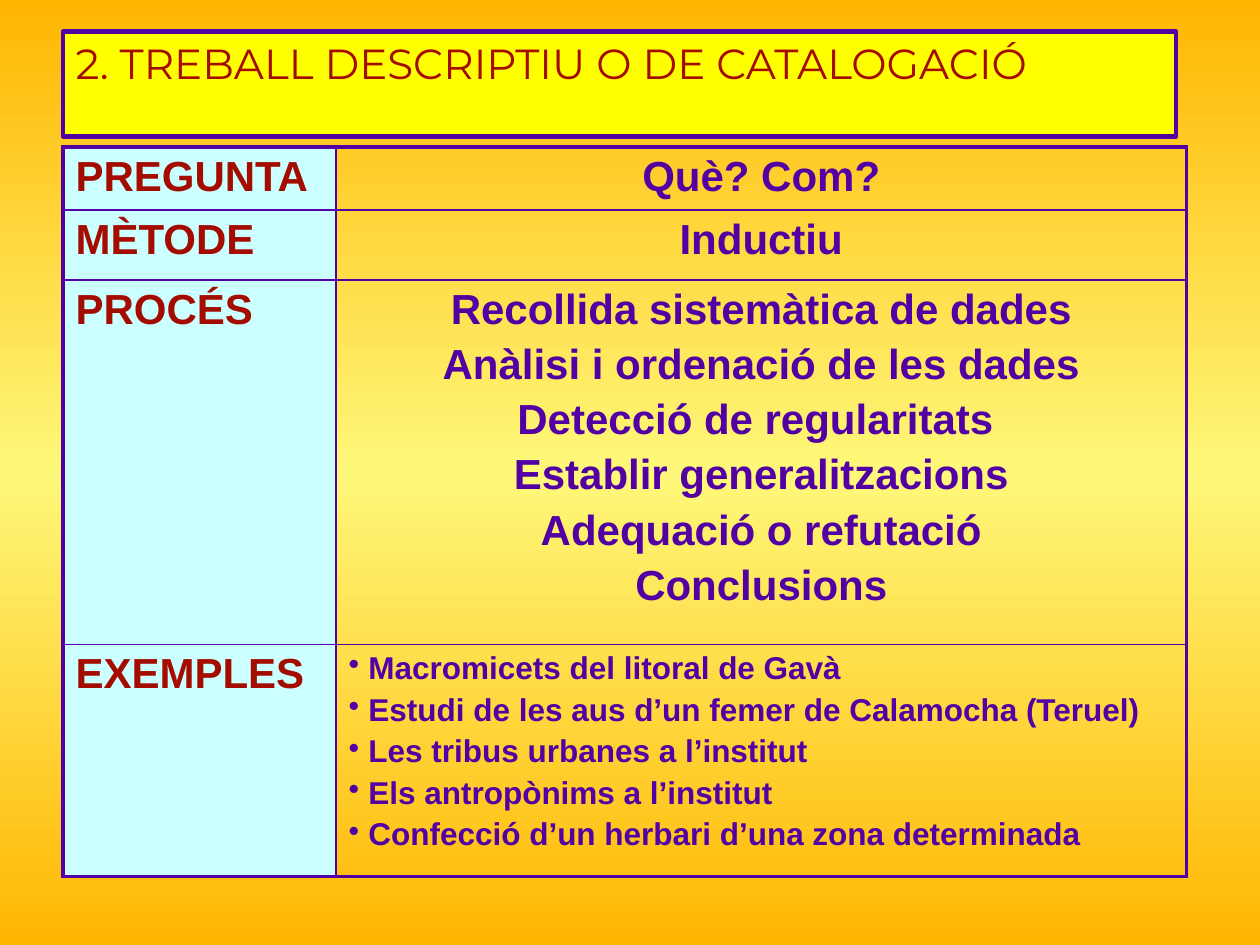
import copy

import pptx
import pptx.dml.color
import pptx.enum.text
import pptx.oxml.ns
import pptx.util
from lxml import etree

ALIGN = pptx.enum.text.PP_ALIGN
COLORS = {
    "edge": "FFB601",
    "glow": "FEF87A",
    "banner": "FFFF00",
    "label": "CCFFFF",
    "violet": "5200A4",
    "red": "A40C00",
}
FONTS = {
    "title": {"name": "Montserrat", "size": pptx.util.Pt(24), "bold": False},
    "large": {"name": "Arial", "size": pptx.util.Pt(24), "bold": True},
    "small": {"name": "Arial", "size": pptx.util.Pt(18), "bold": True},
}
GRID_COLUMNS, GRID_ROWS = 120, 90
COLUMN_WIDTHS = [26, 81]
ROW_HEIGHTS = [6, 6.67, 34.72, 22.1]
OUTER_LINE, INNER_LINE = 2.25, 1
ROWS = [
    ("PREGUNTA", ["Què? Com?"], {}),
    ("MÈTODE", ["Inductiu"], {}),
    ("PROCÉS", [
        "Recollida sistemàtica de dades",
        "Anàlisi i ordenació de les dades",
        "Detecció de regularitats ",
        "Establir generalitzacions",
        "Adequació o refutació",
        "Conclusions",
    ], {"margin": 0.58, "indent": -0.58}),
    ("EXEMPLES", [
        " Macromicets del litoral de Gavà",
        " Estudi de les aus d’un femer de Calamocha (Teruel) ",
        " Les tribus urbanes a l’institut",
        " Els antropònims a l’institut",
        " Confecció d’un herbari d’una zona determinada",
    ], {"font": "small", "align": ALIGN.JUSTIFY, "indent": -0.12, "bullet": "•"}),
]


def set_attributes(target, values):
    for name, value in values.items():
        setattr(target, name, value)


def rgb(color):
    return pptx.dml.color.RGBColor.from_string(COLORS[color])


def add_element(parent, tag, **attributes):
    return etree.SubElement(parent, pptx.oxml.ns.qn(tag), attributes)


class SlideBuilder:
    def __init__(self, presentation):
        self.presentation = presentation
        self.slide = presentation.slides.add_slide(presentation.slide_layouts[5])

    def across(self, columns):
        return round(self.presentation.slide_width * columns / GRID_COLUMNS)

    def down(self, rows):
        return round(self.presentation.slide_height * rows / GRID_ROWS)

    def place(self, left, top, width, height):
        return {
            "left": self.across(left),
            "top": self.down(top),
            "width": self.across(width),
            "height": self.down(height),
        }

    def background(self, colors):
        fill = self.slide.background.fill
        fill.gradient()
        fill.gradient_angle = 90
        stops = self.slide.element.find(".//" + pptx.oxml.ns.qn("a:gsLst"))
        while len(stops) < len(colors):
            stops.append(copy.deepcopy(stops[0]))
        for index, (stop, color) in enumerate(zip(fill.gradient_stops, colors)):
            stop.position = index / (len(colors) - 1)
            stop.color.rgb = rgb(color)

    def add_lines(self, frame, lines, color, font="large", align=ALIGN.LEFT,
                  margin=0, indent=0, bullet=None):
        for index, line in enumerate(lines):
            paragraph = frame.add_paragraph() if index else frame.paragraphs[0]
            run = paragraph.add_run()
            run.text = line
            set_attributes(run.font, FONTS[font])
            run.font.color.rgb = rgb(color)
            space = 0.2 * FONTS[font]["size"].pt if index else 0
            set_attributes(paragraph, {
                "alignment": align,
                "space_before": pptx.util.Pt(space),
            })
            properties = paragraph._p.get_or_add_pPr()
            properties.set("marL", str(pptx.util.Inches(margin)))
            properties.set("indent", str(pptx.util.Inches(indent)))
            if bullet:
                bullet_color = add_element(properties, "a:buClr")
                add_element(bullet_color, "a:srgbClr", val=COLORS[color])
                add_element(properties, "a:buChar", char=bullet)

    def title(self, text, *area):
        shape = self.slide.shapes.title
        set_attributes(shape, self.place(*area))
        shape.fill.solid()
        shape.fill.fore_color.rgb = rgb("banner")
        shape.line.color.rgb = rgb("violet")
        shape.line.width = pptx.util.Pt(2.5)
        set_attributes(shape.text_frame, {
            "word_wrap": True,
            "vertical_anchor": pptx.enum.text.MSO_ANCHOR.TOP,
            "auto_size": pptx.enum.text.MSO_AUTO_SIZE.SHAPE_TO_FIT_TEXT,
        })
        self.add_lines(shape.text_frame, [text], "red", "title")

    def borders(self, cell, outer_sides):
        properties = cell._tc.get_or_add_tcPr()
        for side, is_outer in outer_sides.items():
            width = pptx.util.Pt(OUTER_LINE if is_outer else INNER_LINE)
            line = add_element(properties, "a:ln" + side, w=str(width))
            fill = add_element(line, "a:solidFill")
            add_element(fill, "a:srgbClr", val=COLORS["violet"])

    def table(self, rows, left, top):
        area = self.place(left, top, sum(COLUMN_WIDTHS), sum(ROW_HEIGHTS))
        table = self.slide.shapes.add_table(len(rows), len(COLUMN_WIDTHS), **area).table
        set_attributes(table, {"first_row": False, "horz_banding": False})
        for column, width in zip(table.columns, COLUMN_WIDTHS):
            column.width = self.across(width)
        for index, (label, lines, style) in enumerate(rows):
            table.rows[index].height = self.down(ROW_HEIGHTS[index])
            label_cell, content_cell = table.rows[index].cells
            for cell in (label_cell, content_cell):
                self.borders(cell, {
                    "L": cell is label_cell,
                    "R": cell is content_cell,
                    "T": index == 0,
                    "B": index == len(rows) - 1,
                })
            label_cell.fill.solid()
            label_cell.fill.fore_color.rgb = rgb("label")
            content_cell.fill.background()
            self.add_lines(label_cell.text_frame, [label], "red")
            self.add_lines(content_cell.text_frame, lines, "violet",
                           **{"align": ALIGN.CENTER, **style})


def main():
    presentation = pptx.Presentation()
    set_attributes(presentation, {
        "slide_width": pptx.util.Inches(10),
        "slide_height": pptx.util.Inches(7.5),
    })
    builder = SlideBuilder(presentation)
    builder.background(["edge", "glow", "edge"])
    builder.title("2. TREBALL DESCRIPTIU O DE CATALOGACIÓ", 6, 3, 106, 6.4)
    builder.table(ROWS, 6, 14)
    presentation.save("out.pptx")


if __name__ == "__main__":
    main()
